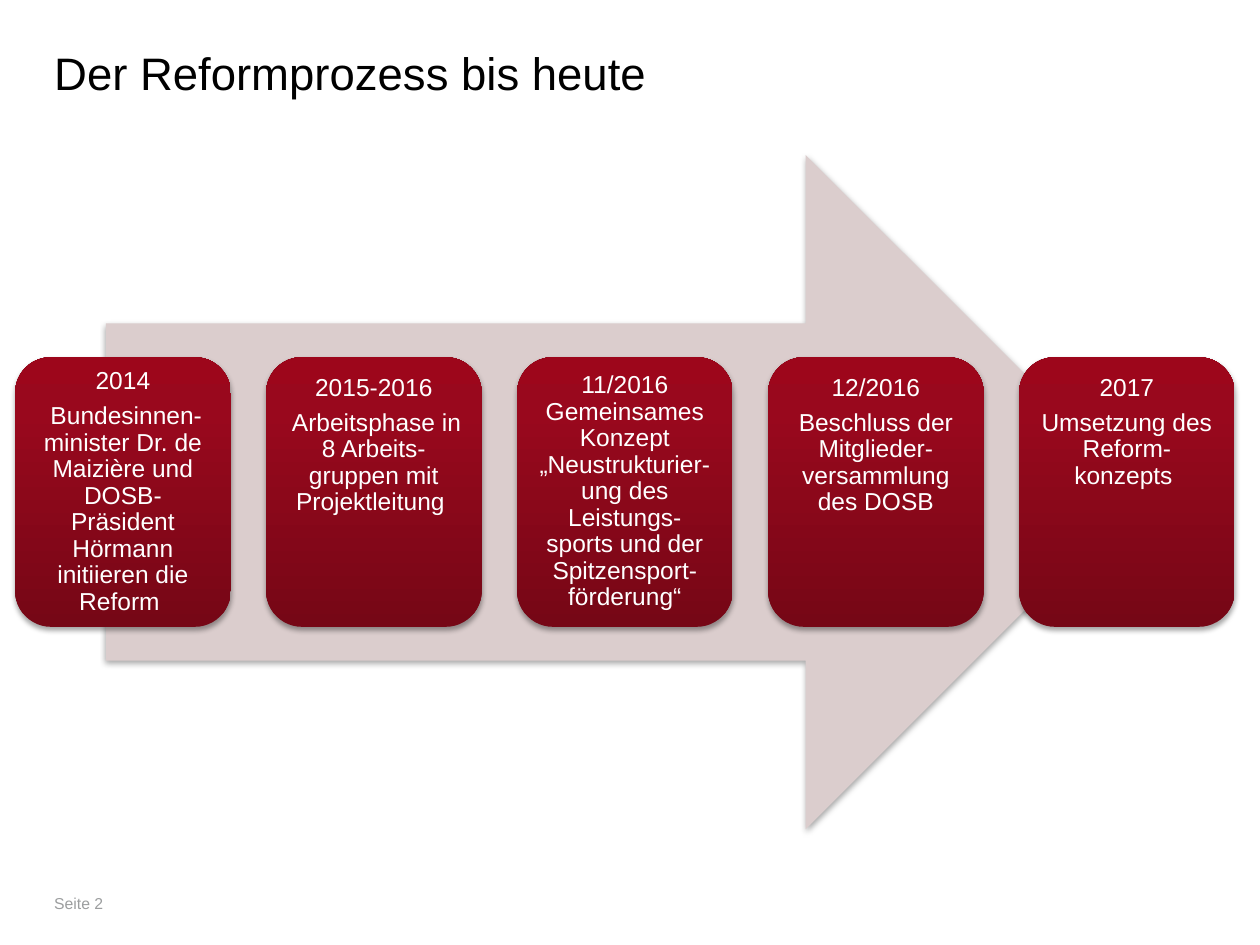
from lxml import etree
from pptx import Presentation
from pptx.dml.color import RGBColor
from pptx.enum.shapes import MSO_SHAPE
from pptx.enum.text import MSO_ANCHOR, PP_ALIGN
from pptx.oxml.ns import qn
from pptx.util import Inches, Pt

ARROW = MSO_SHAPE.RIGHT_ARROW
ROUNDED = MSO_SHAPE.ROUNDED_RECTANGLE
TOP, MIDDLE, BOTTOM = MSO_ANCHOR.TOP, MSO_ANCHOR.MIDDLE, MSO_ANCHOR.BOTTOM
LEFT, CENTER = PP_ALIGN.LEFT, PP_ALIGN.CENTER

FONT = "Arial"
COLORS = {
    "title": "000000",
    "footer": "9C9E9F",
    "arrow": "DBCDCD",
    "step_text": "FFFFFF",
    "shadow": "000000",
}
STEP_GRADIENT = [(0, "760716"), (80, "99081D"), (100, "9D061B")]
MARGIN = 0.43

STEPS = [
    (MIDDLE, ["2014", " Bundesinnen-minister Dr. de Maizière und DOSB-Präsident "
                      "Hörmann initiieren die Reform "]),
    (TOP, ["2015-2016", " Arbeitsphase in 8 Arbeits-gruppen mit Projektleitung "]),
    (MIDDLE, ["11/2016 Gemeinsames Konzept „Neustrukturier-ung des Leistungs- "
              "sports und der Spitzensport- förderung“"]),
    (TOP, ["12/2016", "Beschluss der Mitglieder-versammlung des DOSB"]),
    (TOP, ["2017", "Umsetzung des Reform-konzepts "]),
]


def write_text(frame, paragraphs, size, color, anchor=TOP, align=LEFT, inset=0):
    frame.word_wrap = True
    frame.vertical_anchor = anchor
    frame.margin_left = frame.margin_right = Inches(inset)
    frame.margin_top = frame.margin_bottom = Inches(inset)
    frame.text = "\n".join(paragraphs)
    for paragraph in frame.paragraphs:
        paragraph.alignment = align
        for run in paragraph.runs:
            run.font.name = FONT
            run.font.size = Pt(size)
            run.font.color.rgb = RGBColor.from_string(COLORS[color])


def add_color(parent, hex_color):
    return etree.SubElement(parent, qn("a:srgbClr"), val=hex_color)


def add_shadow(shape):
    """Give the shape a soft shadow falling straight down."""
    shape.shadow.inherit = False
    effects = shape._element.spPr.find(qn("a:effectLst"))
    shadow = etree.SubElement(
        effects, qn("a:outerShdw"), blurRad=str(Pt(3.1)), dist=str(Pt(1.8)),
        dir="5400000", rotWithShape="0")
    etree.SubElement(add_color(shadow, COLORS["shadow"]), qn("a:alpha"), val="35000")


def fill_gradient(shape, stops):
    """Fill from bottom to top with any number of (percent, colour) stops."""
    shape.fill.gradient()
    shape.fill.gradient_angle = 90
    stop_list = shape._element.spPr.find(qn("a:gradFill")).find(qn("a:gsLst"))
    for old_stop in list(stop_list):
        stop_list.remove(old_stop)
    for percent, hex_color in stops:
        stop = etree.SubElement(stop_list, qn("a:gs"), pos=str(percent * 1000))
        add_color(stop, hex_color)


def add_block(slide, preset, box):
    block = slide.shapes.add_shape(preset, *map(Inches, box))
    block.line.fill.background()
    add_shadow(block)
    return block


def add_title(slide, box):
    title = slide.shapes.title
    title.left, title.top, title.width, title.height = map(Inches, box)
    write_text(title.text_frame, ["Der Reformprozess bis heute"], 26, "title")


def add_footer(slide, box):
    footer = slide.shapes.add_textbox(*map(Inches, box))
    write_text(footer.text_frame, ["Seite 2"], 9, "footer", BOTTOM)


def add_arrow(slide, box):
    arrow = add_block(slide, ARROW, box)
    arrow.fill.solid()
    arrow.fill.fore_color.rgb = RGBColor.from_string(COLORS["arrow"])


def add_steps(slide, box, gap):
    """Spread the steps over the box in equal columns."""
    left, top, width, height = box
    step_width = (width - gap * (len(STEPS) - 1)) / len(STEPS)
    for column, (anchor, paragraphs) in enumerate(STEPS):
        step_left = left + column * (step_width + gap)
        step = add_block(slide, ROUNDED, (step_left, top, step_width, height))
        fill_gradient(step, STEP_GRADIENT)
        write_text(step.text_frame, paragraphs, 14, "step_text", anchor, CENTER, 0.06)
        for paragraph in step.text_frame.paragraphs:
            paragraph.line_spacing = 0.9
            paragraph.space_after = Pt(4.9)


def main():
    prs = Presentation()
    prs.slide_width, prs.slide_height = Inches(10), Inches(7.5)
    slide = prs.slides.add_slide(prs.slide_layouts[5])
    add_title(slide, (MARGIN, 0.36, 10 - 2 * MARGIN, 1))
    add_footer(slide, (MARGIN, 7.06, 0.67, 0.18))

    arrow_left, arrow_top, arrow_width, arrow_height = 0.84, 1.23, 8.23, 5.35
    add_arrow(slide, (arrow_left, arrow_top, arrow_width, arrow_height))
    steps_height = 0.4 * arrow_height
    steps_top = arrow_top + (arrow_height - steps_height) / 2
    add_steps(slide, (0.12, steps_top, 9.68, steps_height), gap=0.28)
    prs.save("out.pptx")


if __name__ == "__main__":
    main()
